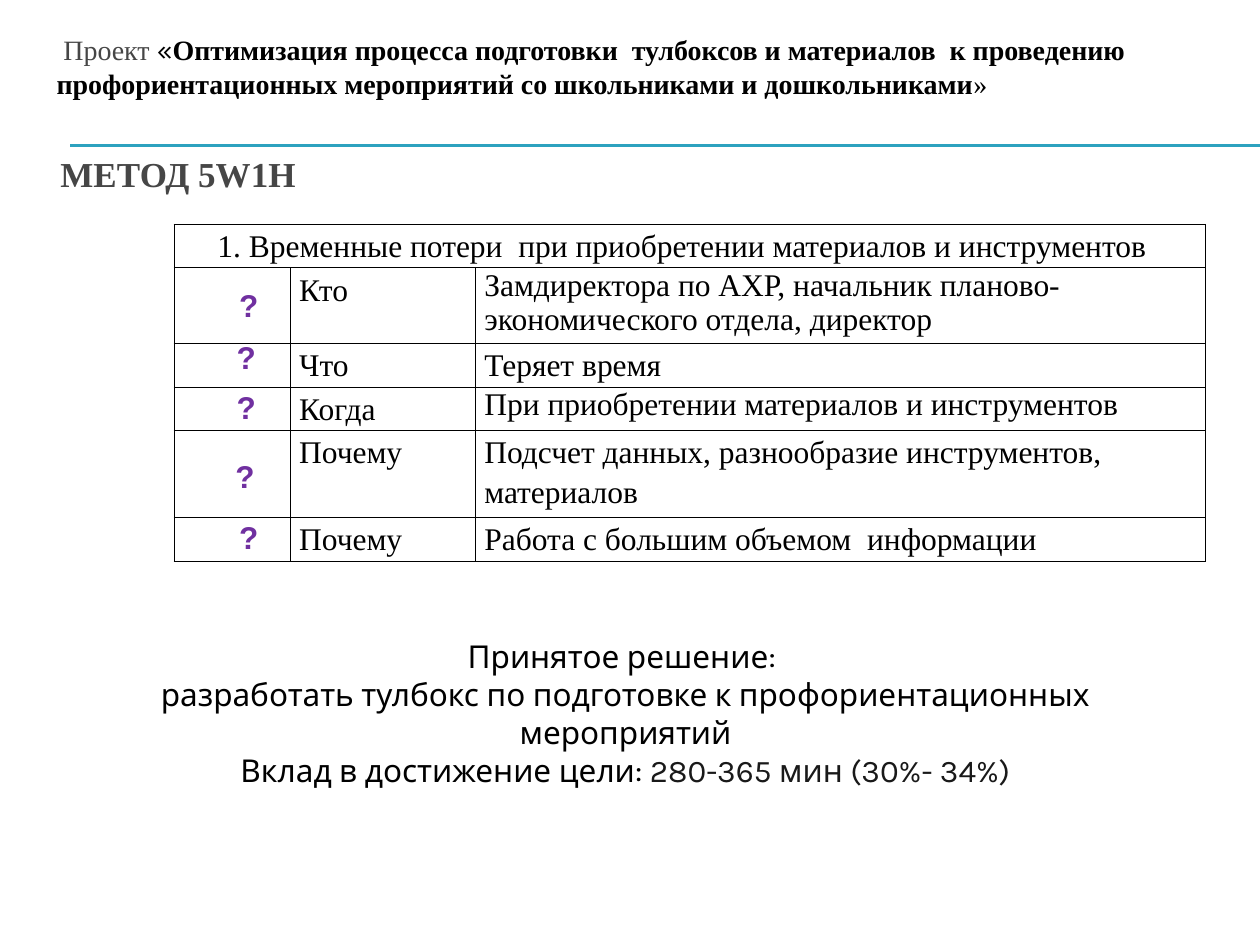
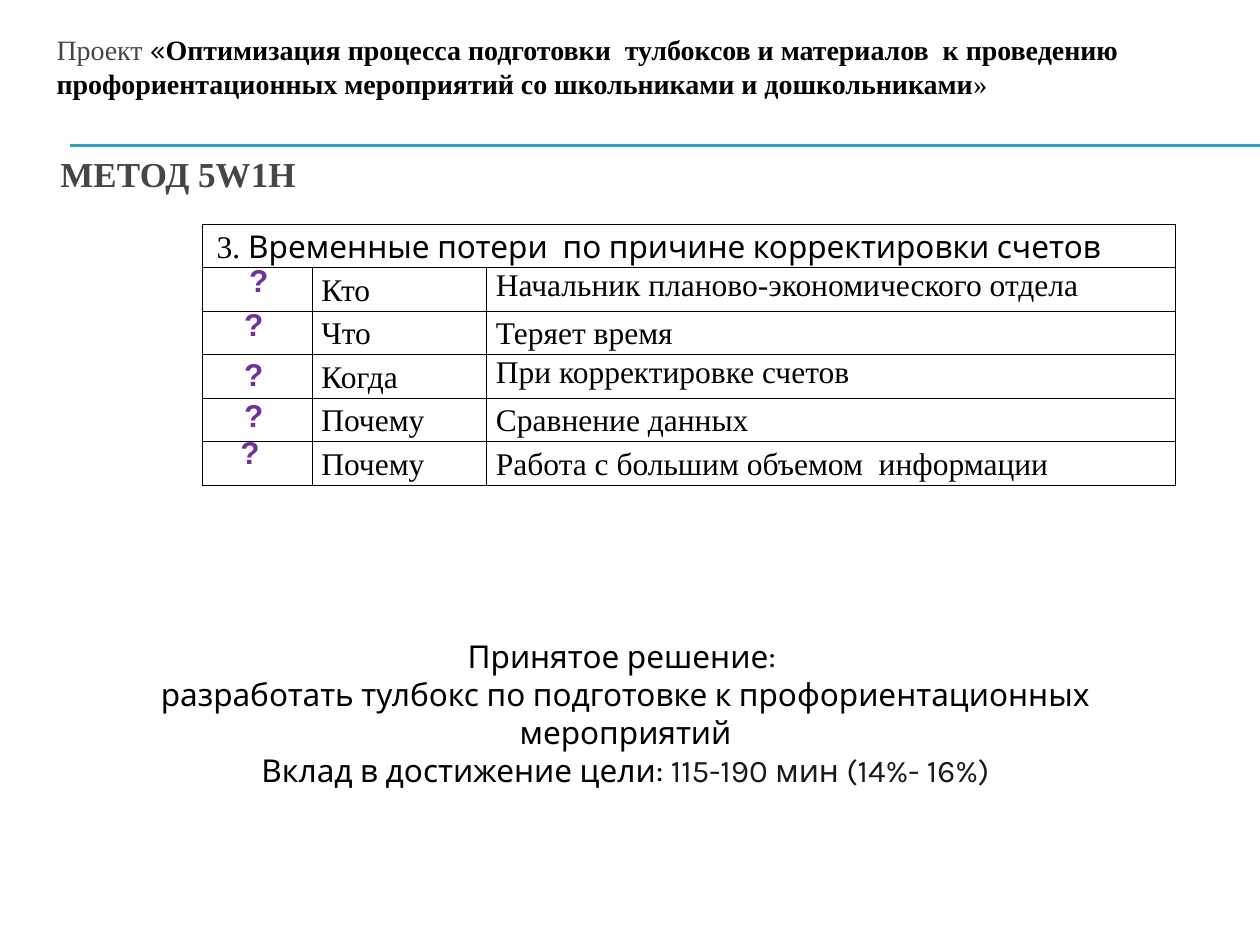
import lxml.etree
import pptx
import pptx.dml.color
import pptx.enum.shapes
import pptx.enum.text
import pptx.oxml.ns
import pptx.util

Pt = pptx.util.Pt
ALIGN = pptx.enum.text.PP_ALIGN
ANCHOR = pptx.enum.text.MSO_ANCHOR
BLACK, GREY, DARK, TEAL, PURPLE = "000000", "464646", "191919", "2DA2BF", "7030A0"
SERIF = {"name": "Times New Roman", "size": Pt(18), "color": BLACK}
BODY = {**SERIF, "name": "Karla"}
TITLE = {**SERIF, "size": Pt(20), "bold": True, "color": GREY}
PROJECT = {**SERIF, "size": Pt(16)}
MARK = {"name": "Arial", "size": Pt(18), "bold": True, "color": PURPLE}
COLUMN_SHARES = (0.1125, 0.1795, 0.708)
ROW_HEIGHT = 24.6
LOOSE = 1.15

SLIDES = [
    {
        "project": " Проект ",
        "table_box": (99.4, 128.2, 589.7),
        "heading": [("1. Временные потери  при приобретении материалов и инструментов\t", SERIF)],
        "rows": [
            ("Кто", "Замдиректора по АХР, начальник планово-экономического отдела, директор", 1, 43.2),
            ("Что", "Теряет время", LOOSE, ROW_HEIGHT),
            ("Когда", "При приобретении материалов и инструментов", 1, ROW_HEIGHT),
            ("Почему", "Подсчет данных, разнообразие инструментов, материалов", LOOSE, 2 * ROW_HEIGHT),
            ("Почему", "Работа с большим объемом  информации", LOOSE, ROW_HEIGHT),
        ],
        "marks": [(30.2, 31.7), (28.8, 61.2), (28.8, 90), (28.1, 129.6), (30.2, 164.2)],
        "gain": "280-365 мин (30%- 34%)",
    },
    {
        "project": "Проект ",
        "table_box": (115.9, 128.2, 555.9),
        "heading": [("3. ", SERIF), ("Временные потери  по причине корректировки счетов\t", BODY)],
        "rows": [
            ("Кто", "Начальник планово-экономического отдела", 1, ROW_HEIGHT),
            ("Что", "Теряет время", LOOSE, ROW_HEIGHT),
            ("Когда", "При корректировке счетов", 1, ROW_HEIGHT),
            ("Почему", "Сравнение данных", LOOSE, ROW_HEIGHT),
            ("Почему", "Работа с большим объемом  информации", LOOSE, ROW_HEIGHT),
        ],
        "marks": [(19.4, 17.3), (16.6, 42.5), (16.6, 71.3), (16.6, 94.3), (14.4, 115.9)],
        "gain": "115-190 мин (14%- 16%)",
    },
]


def rgb(value):
    """Turn a hex string into a colour."""
    return pptx.dml.color.RGBColor.from_string(value)


def set_format(target, values):
    """Set font attributes from a dict of format values."""
    for key, value in values.items():
        if key == "color":
            target.color.rgb = rgb(value)
        else:
            setattr(target, key, value)


def write_paragraph(p, runs, align=ALIGN.LEFT, spacing=1):
    """Fill a paragraph with formatted runs."""
    p.alignment = align
    p.line_spacing = spacing
    for text, font in runs:
        r = p.add_run()
        r.text = text
        set_format(r.font, font)


def add_text(s, box, paragraphs, align=ALIGN.LEFT, anchor=ANCHOR.TOP, wrap=True):
    """Place a text box holding one list of runs per paragraph."""
    tf = s.shapes.add_textbox(*map(Pt, box)).text_frame
    tf.word_wrap = wrap
    tf.vertical_anchor = anchor
    for i, runs in enumerate(paragraphs):
        p = tf.add_paragraph() if i else tf.paragraphs[0]
        write_paragraph(p, runs, align)


def add_rule(s, x1, x2, y):
    """Draw one thin horizontal rule."""
    line = s.shapes.add_connector(pptx.enum.shapes.MSO_CONNECTOR.STRAIGHT, Pt(x1), Pt(y), Pt(x2), Pt(y))
    line.line.color.rgb = rgb(TEAL)
    line.line.width = Pt(0.75)
    lxml.etree.SubElement(line._element.spPr, pptx.oxml.ns.qn("a:effectLst"))


def add_header(s, box, project):
    """Place the project name, the double rule and the slide title."""
    left, top, width, height = box
    name = [
        (project, {**PROJECT, "color": GREY}),
        ("«", {**PROJECT, "name": "Karla"}),
        ("Оптимизация процесса подготовки  тулбоксов и материалов  к проведению "
         "профориентационных мероприятий со школьниками и дошкольниками", {**PROJECT, "bold": True}),
        ("»", PROJECT),
    ]
    add_text(s, (left, top, width, 46), [name])
    for offset in (67.7, 68.4):
        add_rule(s, left + 15.1, 720, top + offset)
    add_text(s, (left + 2.2, top + height - 56, 256, 56), [[("МЕТОД 5W1H", TITLE)]], anchor=ANCHOR.MIDDLE)


def style_cell(cell):
    """Clear a cell's fill, set its margins and draw its borders."""
    cell.fill.background()
    margins = {"margin_left": 5.2, "margin_right": 5.2, "margin_top": 0, "margin_bottom": 0}
    for key, value in margins.items():
        setattr(cell, key, Pt(value))
    tc_pr = cell._tc.get_or_add_tcPr()
    for i, side in enumerate(("lnL", "lnR", "lnT", "lnB")):
        ln = lxml.etree.Element(pptx.oxml.ns.qn(f"a:{side}"), w=str(Pt(0.5)))
        fill = lxml.etree.SubElement(ln, pptx.oxml.ns.qn("a:solidFill"))
        lxml.etree.SubElement(fill, pptx.oxml.ns.qn("a:srgbClr"), val=BLACK)
        tc_pr.insert(i, ln)


def add_questions(s, box, heading, rows, marks):
    """Place the question table and its question marks."""
    left, top, width = box
    heights = [ROW_HEIGHT] + [row[3] for row in rows]
    frame = s.shapes.add_table(len(heights), 3, *map(Pt, (left, top, width, sum(heights))))
    table = frame.table
    table.first_row = table.horz_banding = False
    for column, share in zip(table.columns, COLUMN_SHARES):
        column.width = Pt(width * share)
    for row, height in zip(table.rows, heights):
        row.height = Pt(height)
    for cell in table.iter_cells():
        style_cell(cell)
    table.cell(0, 0).merge(table.cell(0, 2))
    write_paragraph(table.cell(0, 0).text_frame.paragraphs[0], heading, ALIGN.CENTER, LOOSE)
    for i, (question, answer, spacing, _) in enumerate(rows, 1):
        write_paragraph(table.cell(i, 1).text_frame.paragraphs[0], [(question, SERIF)], spacing=LOOSE)
        write_paragraph(table.cell(i, 2).text_frame.paragraphs[0], [(answer, SERIF)], spacing=spacing)
    for x, y in marks:
        add_text(s, (left + x, top + y, 25.9, 28.8), [[("?", MARK)]], wrap=False)


def add_decision(s, box, gain):
    """Place the decision and its contribution to the goal."""
    add_text(s, box, [
        [("Принятое решение: ", BODY)],
        [("разработать тулбокс по подготовке к профориентационных мероприятий", BODY)],
        [("Вклад в достижение цели: ", BODY), (gain, {**BODY, "color": DARK})],
    ], ALIGN.CENTER)


def main():
    """Build the slides and save the file."""
    prs = pptx.Presentation()
    prs.slide_width, prs.slide_height = Pt(720), Pt(540)
    for content in SLIDES:
        s = prs.slides.add_slide(prs.slide_layouts[6])
        add_header(s, (25.2, 15.1, 668.9, 112.3), content["project"])
        add_decision(s, (48.2, 360.7, 618.5, 72.7), content["gain"])
        add_questions(s, content["table_box"], content["heading"], content["rows"], content["marks"])
    prs.save("out.pptx")


if __name__ == "__main__":
    main()
